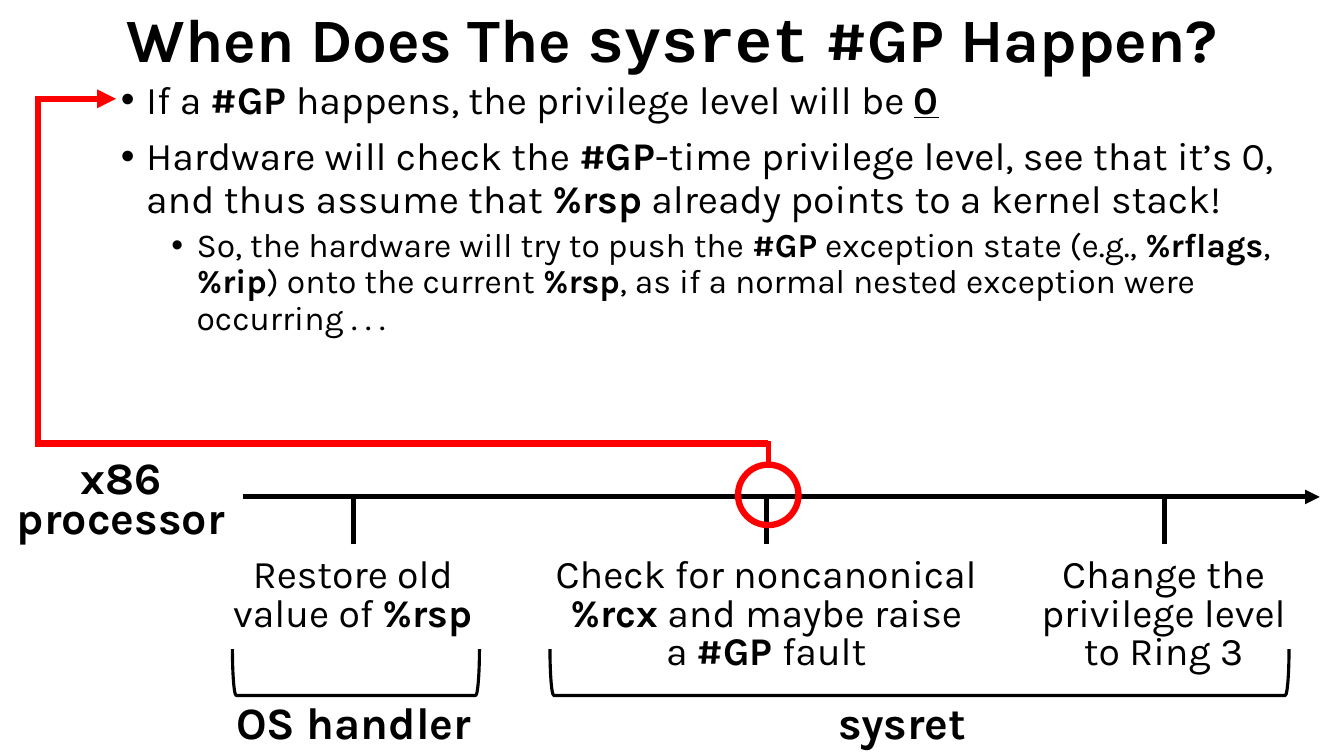
from pptx import Presentation
from pptx.dml.color import RGBColor
from pptx.enum.shapes import MSO_CONNECTOR, MSO_SHAPE
from pptx.enum.text import MSO_ANCHOR, PP_ALIGN
from pptx.oxml.ns import qn
from pptx.util import Inches, Pt
from lxml.etree import SubElement

# Content: *bold*, *_bold underlined*, *`monospaced*
TITLE = "When Does The *`sysret* #GP Happen?"
BULLETS = [
    (0, "If a *#GP* happens, the privilege level will be *_0*"),
    (0, "Hardware will check the *#GP*-time privilege level, see that it’s 0, "
        "and thus assume that *%rsp* already points to a kernel stack!"),
    (1, "So, the hardware will try to push the *#GP* exception state (e.g., "
        "*%rflags*, *%rip*) onto the current *%rsp*, as if a normal nested "
        "exception were occurring . . ."),
]
PROCESSOR = ["x86", "processor"]
# Timeline steps: tick x, label centre x, label lines
STEPS = [
    (3.51, 3.50, ["Restore old", "value of *%rsp*"]),
    (7.60, 7.60, ["Check for noncanonical", "*%rcx* and maybe raise", "a *#GP* fault"]),
    (11.55, 11.54, ["Change the", "privilege level", "to Ring 3"]),
]
# Phases: bracket centre x, bracket span, label centre x, label
PHASES = [(3.53, 2.45, 3.51, "OS handler"), (9.12, 7.33, 8.95, "sysret")]

COLORS = {"ink": "000000", "fault": "FF0000"}
FONT, MONO = "Karla", "Courier New"
AXIS_Y, TICK_BOTTOM, BRACKET_Y, BRACKET_DEPTH = 4.93, 5.4, 6.67, 0.46
LABEL_WIDTH = 4.4
FAULT_X, FAULT_Y, FAULT_SIZE = 7.62, 4.91, 0.6
RETURN_X, RETURN_Y, BULLET_Y = 0.38, 4.4, 0.98
LEVELS = [dict(size=28, indent=0.25, before=10), dict(size=24, indent=0.75, before=5)]

prs = Presentation()
prs.slide_width, prs.slide_height = Inches(13.33), Inches(7.5)
slide = prs.slides.add_slide(prs.slide_layouts[6])


def color(name):
    return RGBColor.from_string(COLORS[name])


def add_text(frame, text, size=28, bold=False, align=PP_ALIGN.CENTER,
             spacing=1.0, before=0, indent=None):
    """Fill the next paragraph of a frame with marked-up text."""
    first = frame.paragraphs[0]
    para = frame.add_paragraph() if first.runs else first
    para.alignment, para.line_spacing, para.space_before = align, spacing, Pt(before)
    if indent is not None:
        props = para._p.get_or_add_pPr()
        props.set("marL", str(Inches(indent)))
        props.set("indent", str(Inches(-0.25)))
        SubElement(props, qn("a:buFont")).set("typeface", "Arial")
        SubElement(props, qn("a:buChar")).set("char", "•")
    for i, piece in enumerate(text.split("*")):
        if not piece:
            continue
        run = para.add_run()
        run.text = piece.lstrip("_`")
        run.font.size, run.font.bold = Pt(size), bold or i % 2 == 1
        run.font.underline = piece.startswith("_")
        run.font.name = MONO if piece.startswith("`") else FONT
        run.font.color.rgb = color("ink")


def add_frame(left, top, width, height, anchor=MSO_ANCHOR.TOP):
    frame = slide.shapes.add_textbox(*map(Inches, (left, top, width, height))).text_frame
    frame.word_wrap, frame.vertical_anchor = True, anchor
    frame.margin_left = frame.margin_right = 0
    return frame


def add_label(center, top, lines, **fmt):
    frame = add_frame(center - LABEL_WIDTH / 2, top, LABEL_WIDTH, 0.4 * len(lines) + 0.2)
    for line in lines:
        add_text(frame, line, **fmt)


def add_line(x1, y1, x2, y2, ink="ink", width=3.5, arrow=False):
    line = slide.shapes.add_connector(MSO_CONNECTOR.STRAIGHT, *map(Inches, (x1, y1, x2, y2)))
    line.line.color.rgb, line.line.width = color(ink), Pt(width)
    if arrow:
        SubElement(line.line._get_or_add_ln(), qn("a:tailEnd")).set("type", "triangle")
    SubElement(line._element.spPr, qn("a:effectLst"))


def add_outline(kind, x, y, width, height, ink, weight, rotation=0):
    """Add an unfilled shape centred on x, y."""
    box = map(Inches, (x - width / 2, y - height / 2, width, height))
    shape = slide.shapes.add_shape(kind, *box)
    shape.rotation, shape.shadow.inherit = rotation, False
    shape.fill.background()
    shape.line.color.rgb, shape.line.width = color(ink), Pt(weight)


# Title
add_text(add_frame(0.92, 0, 11.5, 0.84, MSO_ANCHOR.MIDDLE), TITLE,
         size=44, bold=True, spacing=0.9)

# Processor timeline
add_label(1.2, 4.56, PROCESSOR, size=32, bold=True, spacing=Pt(28))
add_line(2.41, AXIS_Y, 13.09, AXIS_Y, arrow=True)
for tick, center, lines in STEPS:
    add_line(tick, TICK_BOTTOM, tick, AXIS_Y)
    add_label(center, 5.49, lines, spacing=Pt(27.4))

# Phase brackets
for middle, span, center, name in PHASES:
    add_outline(MSO_SHAPE.LEFT_BRACKET, middle, BRACKET_Y, BRACKET_DEPTH, span,
                "ink", 2.25, rotation=270)
    add_label(center, 6.84, [name], size=32, bold=True)

# Fault marker and its path to the first bullet
add_outline(MSO_SHAPE.OVAL, FAULT_X, FAULT_Y, FAULT_SIZE, FAULT_SIZE, "fault", 4.5)
add_line(FAULT_X, FAULT_Y - FAULT_SIZE / 2, FAULT_X, RETURN_Y - 0.02, "fault")
add_line(FAULT_X, RETURN_Y, RETURN_X - 0.03, RETURN_Y, "fault", 4.5)
add_line(RETURN_X, RETURN_Y, RETURN_X, BULLET_Y, "fault", 4.5)
add_line(RETURN_X - 0.03, BULLET_Y, 1.15, BULLET_Y, "fault", 4.5, arrow=True)

# Bullets
body = add_frame(1.2, 0.75, 11.44, 3.73)
for level, text in BULLETS:
    add_text(body, text, align=PP_ALIGN.LEFT, spacing=0.9, **LEVELS[level])

prs.save("out.pptx")
